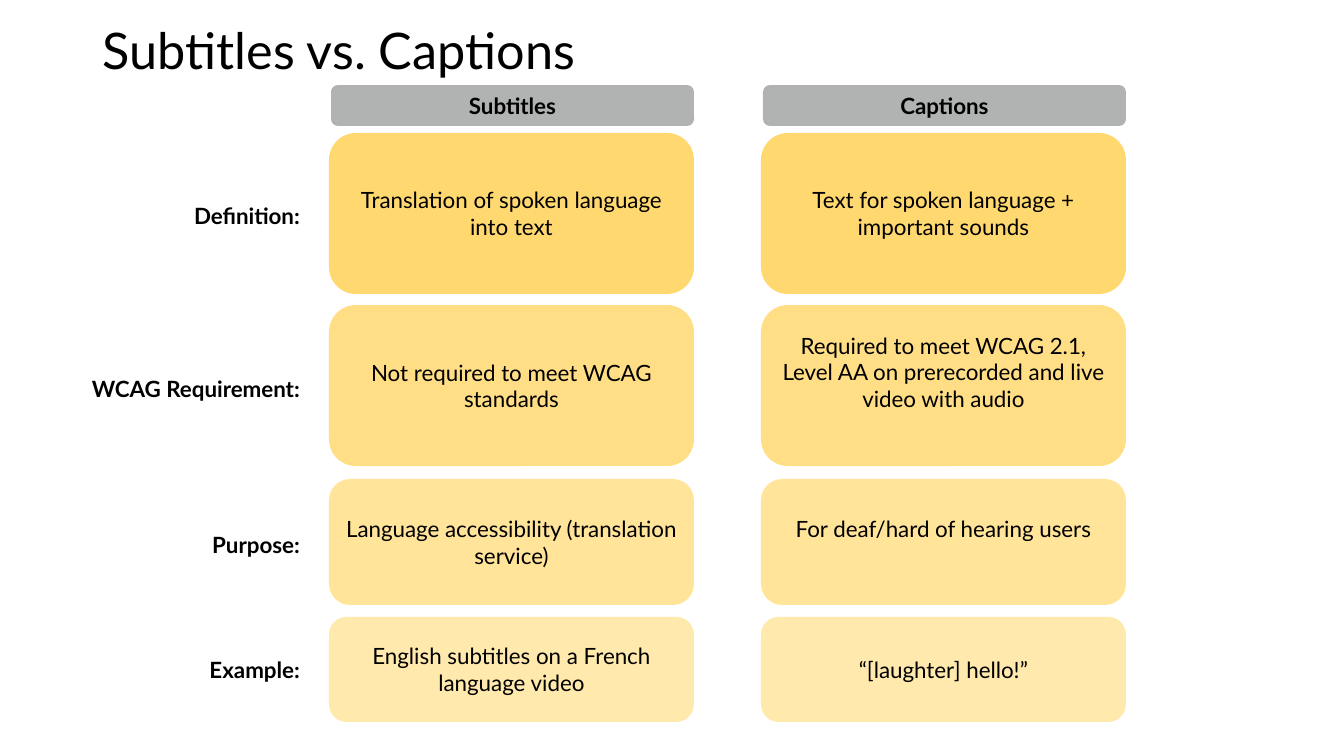
from pptx import Presentation
from pptx import util as u
from pptx.dml.color import RGBColor
from pptx.enum import shapes, text

PX = 914400 / 100.8  # EMU per pixel
FONT = "Lato"
BLACK, GREY = "000000", "B0B3B2"
INSET_X, INSET_Y, LINE = 10, 5, 27
COLUMN_LEFTS, COLUMN_WIDTH = (329, 761), 365
HEADINGS = ("Subtitles", "Captions")

# Top, height, label shift, fill, label, then (text, lines raised) per column
ROWS = [
    (133, 161, 2, "FFD970", "Definition:",
     [("Translation of spoken language into text", 0),
      ("Text for spoken language + important sounds", 0)]),
    (305, 161, 3, "FFDE85", "WCAG Requirement:",
     [("Not required to meet WCAG standards", 0),
      ("Required to meet WCAG 2.1, Level AA on prerecorded and live video with audio", 1)]),
    (479, 126, 3, "FFE499", "Purpose:",
     [("Language accessibility (translation service)", 0),
      ("For deaf/hard of hearing users", 1)]),
    (617, 105, 0, "FFE9AD", "Example:",
     [("English subtitles on a French language video", 0),
      ("“[laughter] hello!”", 0)]),
]


def px(length):
    return u.Emu(round(length * PX))


def color(value):
    return RGBColor.from_string(value)


def write(shape, words, size, align, bold=False, raised=0):
    frame = shape.text_frame
    frame.word_wrap = True
    frame.auto_size = text.MSO_AUTO_SIZE.NONE
    frame.vertical_anchor = text.MSO_ANCHOR.MIDDLE
    frame.margin_left = frame.margin_right = px(INSET_X)
    frame.margin_top = px(INSET_Y)
    frame.margin_bottom = px(INSET_Y + raised * LINE)
    paragraph = frame.paragraphs[0]
    paragraph.text = words
    paragraph.alignment = align
    font = paragraph.font
    font.name, font.size, font.bold = FONT, u.Pt(size), bold
    font.color.rgb = color(BLACK)
    return paragraph


def add_text(slide, box, words, size, align, bold=False):
    shape = slide.shapes.add_textbox(*map(px, box))
    return write(shape, words, size, align, bold)


def add_card(slide, box, fill, words, bold=False, raised=0):
    shape = slide.shapes.add_shape(shapes.MSO_SHAPE.ROUNDED_RECTANGLE, *map(px, box))
    shape.shadow.inherit = False
    shape.fill.solid()
    shape.fill.fore_color.rgb = color(fill)
    shape.line.fill.background()
    write(shape, words, 16, text.PP_ALIGN.CENTER, bold, raised)


def add_title(slide, box):
    paragraph = add_text(slide, box, "Subtitles vs. Captions", 36, text.PP_ALIGN.LEFT)
    paragraph.line_spacing = 0.9


def add_headings(slide, top, height):
    for left, heading in zip(COLUMN_LEFTS, HEADINGS):
        add_card(slide, (left + 2, top, COLUMN_WIDTH - 2, height), GREY, heading, bold=True)


def add_row(slide, top, height, label_shift, fill, label, cells):
    add_text(slide, (67, top + label_shift, 243, height), label, 16,
             text.PP_ALIGN.RIGHT, bold=True)
    for left, (words, raised) in zip(COLUMN_LEFTS, cells):
        add_card(slide, (left, top, COLUMN_WIDTH, height), fill, words, raised=raised)


def main():
    presentation = Presentation()
    presentation.slide_width, presentation.slide_height = px(1344), px(756)
    slide = presentation.slides.add_slide(presentation.slide_layouts[6])
    add_title(slide, (93, 11, 1159, 84))
    add_headings(slide, 85, 41)
    for row in ROWS:
        add_row(slide, *row)
    presentation.save("out.pptx")


if __name__ == "__main__":
    main()
